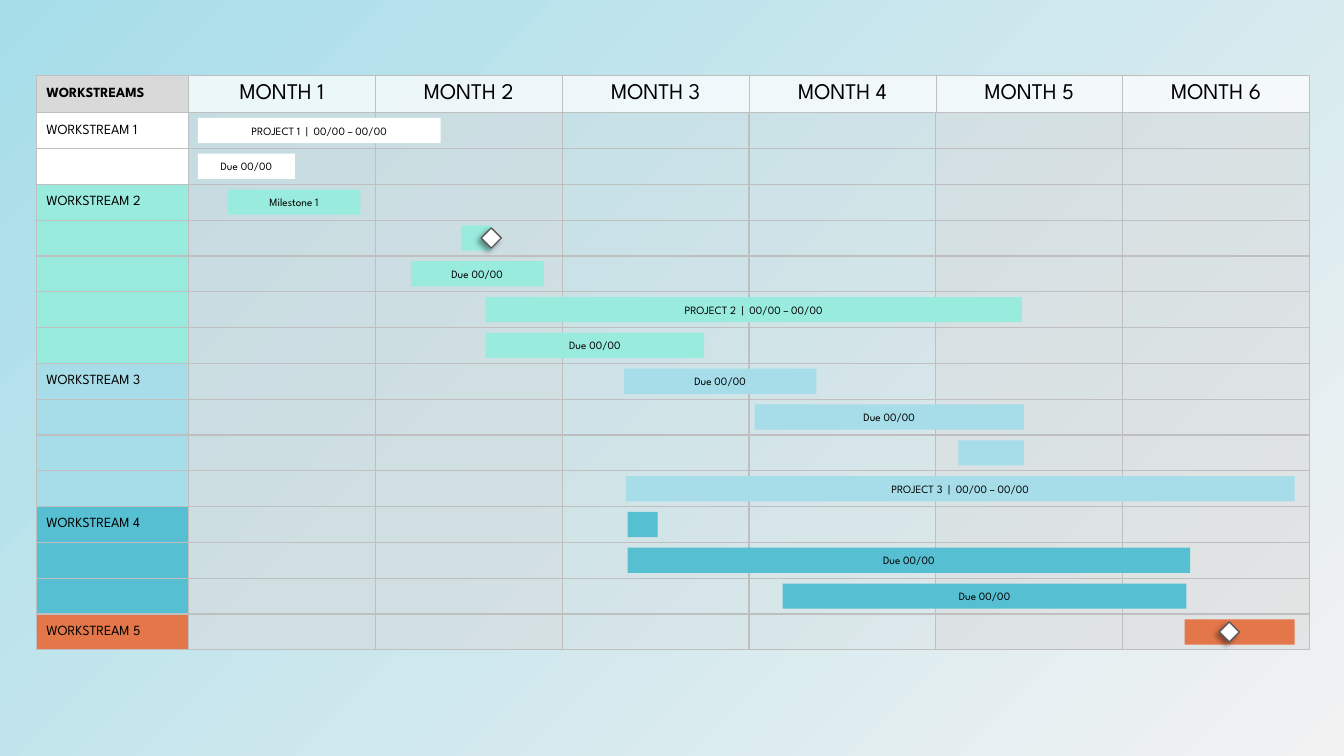
from dataclasses import dataclass

from lxml import etree
from pptx import Presentation
from pptx.dml.color import RGBColor
from pptx.enum.shapes import MSO_SHAPE
from pptx.enum.text import MSO_ANCHOR, PP_ALIGN
from pptx.oxml.ns import qn
from pptx.util import Inches, Pt

RECT, DIAMOND = MSO_SHAPE.RECTANGLE, MSO_SHAPE.DIAMOND
MIDDLE = MSO_ANCHOR.MIDDLE
LEFT, CENTER = PP_ALIGN.LEFT, PP_ALIGN.CENTER


@dataclass(frozen=True)
class Theme:
    font: str = "League Spartan"
    ink: str = "000000"
    white: str = "FFFFFF"
    grey: str = "D9D9D9"
    border: str = "BFBFBF"
    outline: str = "595959"
    pale: str = "F2F2F2"
    mint: str = "99EBDD"
    sky: str = "A6DDE9"
    teal: str = "56BFD2"
    orange: str = "E4774A"
    month_size: int = 16
    label_size: int = 10
    bar_size: int = 8


@dataclass(frozen=True)
class Box:
    left: float
    top: float
    width: float
    height: float


THEME = Theme()
SLIDE_W, SLIDE_H = 13.33, 7.5
CHART_BOX = Box(0.36, 0.75, 12.63, 5.7)
LABEL_W, HEADER_H = 1.51, 0.37
BAR_H, BAR_OFFSET, DIAMOND_SIZE = 0.25, 0.05, 0.2

MONTHS = [f"MONTH {n}" for n in range(1, 7)]
MONTH_ALPHA = [50, 50, 25, 25, 50, 50]
STREAMS = [(THEME.white, 2), (THEME.mint, 5), (THEME.sky, 4),
           (THEME.teal, 3), (THEME.orange, 1)]
ROW_COLORS = [color for color, count in STREAMS for _ in range(count)]
ROW_LABELS = [f"WORKSTREAM {n}" if i == 0 else ""
              for n, (_, count) in enumerate(STREAMS, 1) for i in range(count)]

# start and length in months, one bar per row
BARS = [
    (0.05, 1.3, "PROJECT 1  |  00/00 – 00/00"),
    (0.05, 0.52, "Due 00/00"),
    (0.21, 0.71, "Milestone 1"),
    (1.46, 0.16, ""),
    (1.19, 0.71, "Due 00/00"),
    (1.59, 2.87, "PROJECT 2  |  00/00 – 00/00"),
    (1.59, 1.17, "Due 00/00"),
    (2.33, 1.03, "Due 00/00"),
    (3.03, 1.44, "Due 00/00"),
    (4.12, 0.35, ""),
    (2.34, 3.58, "PROJECT 3  |  00/00 – 00/00"),
    (2.35, 0.16, ""),
    (2.35, 3.01, "Due 00/00"),
    (3.18, 2.16, "Due 00/00"),
    (5.33, 0.59, ""),
]
MILESTONES = [(14, 5.57), (3, 1.62)]


def rgb(color):
    return RGBColor.from_string(color)


def set_alpha(color_el, percent):
    etree.SubElement(color_el, qn("a:alpha"), val=str(percent * 1000))


def write(tf, text, size, align=LEFT, bold=False):
    p = tf.paragraphs[0]
    p.alignment = align
    if not text:
        etree.SubElement(p._p, qn("a:endParaRPr"), sz=str(size * 100))
        return
    r = p.add_run()
    r.text = text
    r.font.name = THEME.font
    r.font.size = Pt(size)
    r.font.bold = bold
    r.font.color.rgb = rgb(THEME.ink)


def format_cell(cell, text, fill, size, alpha=100, header=False, **text_format):
    write(cell.text_frame, text, size, **text_format)
    cell.vertical_anchor = MIDDLE
    tc_pr = cell._tc.get_or_add_tcPr()
    for side in "LRTB":
        width = 0.5 if header and side != "B" else 1
        ln = etree.SubElement(tc_pr, qn(f"a:ln{side}"), w=str(Pt(width)))
        solid = etree.SubElement(ln, qn("a:solidFill"))
        etree.SubElement(solid, qn("a:srgbClr"), val=THEME.border)
    cell.fill.solid()
    cell.fill.fore_color.rgb = rgb(fill)
    if alpha < 100:
        set_alpha(tc_pr.find(qn("a:solidFill"))[0], alpha)


def add_block(slide, kind, left, top, width, height, fill):
    sp = slide.shapes.add_shape(kind, Inches(left), Inches(top),
                                Inches(width), Inches(height))
    sp.shadow.inherit = False
    sp.fill.solid()
    sp.fill.fore_color.rgb = rgb(fill)
    sp.line.fill.background()
    return sp


def draw_background(slide):
    fill = slide.background.fill
    fill.gradient()
    fill.gradient_angle = 135
    for stop, color, position in zip(fill.gradient_stops, (THEME.pale, THEME.sky), (0, 1)):
        stop.color.rgb = rgb(color)
        stop.position = position
    first_stop = next(slide.element.iter(qn("a:gs")))
    set_alpha(first_stop[0], 40)


def draw_grid(slide, box, month_w, row_h):
    frame = slide.shapes.add_table(len(BARS) + 1, len(MONTHS) + 1,
                                   Inches(box.left), Inches(box.top),
                                   Inches(box.width), Inches(box.height))
    table = frame.table
    table.first_row = table.horz_banding = False
    for i, col in enumerate(table.columns):
        col.width = Inches(month_w if i else LABEL_W)
    for i, row in enumerate(table.rows):
        row.height = Inches(row_h if i else HEADER_H)

    format_cell(table.cell(0, 0), "WORKSTREAMS", THEME.grey, THEME.label_size,
                header=True, bold=True)
    for c, month in enumerate(MONTHS, 1):
        format_cell(table.cell(0, c), month, THEME.white, THEME.month_size,
                    alpha=75, header=True, align=CENTER)
    for r, (label, color) in enumerate(zip(ROW_LABELS, ROW_COLORS), 1):
        format_cell(table.cell(r, 0), label, color, THEME.label_size)
        for c, alpha in enumerate(MONTH_ALPHA, 1):
            format_cell(table.cell(r, c), "", THEME.grey, THEME.label_size, alpha=alpha)


def draw_bars(slide, box, month_w, row_h):
    for row, ((start, length, text), color) in enumerate(zip(BARS, ROW_COLORS)):
        sp = add_block(slide, RECT, box.left + start * month_w,
                       box.top + row * row_h + BAR_OFFSET,
                       length * month_w, BAR_H, color)
        if text:
            tf = sp.text_frame
            tf.vertical_anchor = MIDDLE
            write(tf, text, THEME.bar_size, align=CENTER)


def draw_milestones(slide, box, month_w, row_h):
    for row, month in MILESTONES:
        center_y = box.top + row * row_h + BAR_OFFSET + BAR_H / 2
        sp = add_block(slide, DIAMOND, box.left + month * month_w - DIAMOND_SIZE / 2,
                       center_y - DIAMOND_SIZE / 2, DIAMOND_SIZE, DIAMOND_SIZE, THEME.white)
        sp.line.color.rgb = rgb(THEME.outline)
        sp.line.width = Pt(1)
        effects = sp._element.spPr.find(qn("a:effectLst"))
        shadow = etree.SubElement(effects, qn("a:outerShdw"), blurRad=str(Pt(4)),
                                  dist=str(Pt(3)), dir=str(135 * 60000))
        set_alpha(etree.SubElement(shadow, qn("a:srgbClr"), val=THEME.ink), 40)


def draw_gantt(slide, box):
    month_w = (box.width - LABEL_W) / len(MONTHS)
    row_h = (box.height - HEADER_H) / len(BARS)
    body = Box(box.left + LABEL_W, box.top + HEADER_H,
               box.width - LABEL_W, box.height - HEADER_H)
    draw_grid(slide, box, month_w, row_h)
    draw_bars(slide, body, month_w, row_h)
    draw_milestones(slide, body, month_w, row_h)


def main():
    prs = Presentation()
    prs.slide_width, prs.slide_height = Inches(SLIDE_W), Inches(SLIDE_H)
    slide = prs.slides.add_slide(prs.slide_layouts[6])
    draw_background(slide)
    draw_gantt(slide, CHART_BOX)
    prs.save("out.pptx")


if __name__ == "__main__":
    main()
